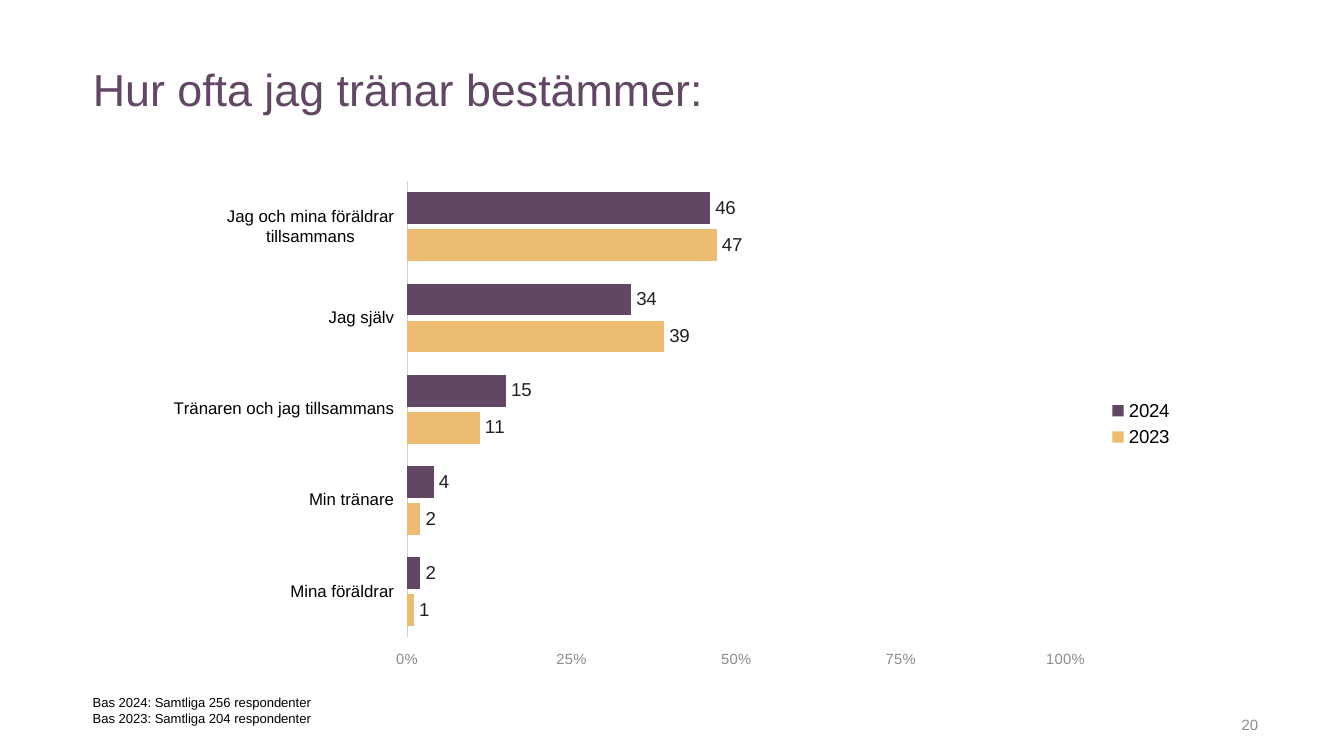
from lxml import etree
from pptx import Presentation
from pptx.chart.data import CategoryChartData
from pptx.dml.color import RGBColor
from pptx.enum.chart import XL_CHART_TYPE as ChartType
from pptx.enum.chart import XL_LABEL_POSITION as LabelPosition
from pptx.enum.chart import XL_LEGEND_POSITION as LegendPosition
from pptx.enum.chart import XL_TICK_LABEL_POSITION as TickLabels
from pptx.enum.chart import XL_TICK_MARK as TickMark
from pptx.enum.text import MSO_ANCHOR as Anchor
from pptx.enum.text import MSO_AUTO_SIZE as AutoSize
from pptx.enum.text import PP_ALIGN as Align
from pptx.oxml.ns import qn
from pptx.util import Inches, Pt

TITLE = "Hur ofta jag tränar bestämmer:"
CATEGORIES = [
    "Mina föräldrar",
    "Min tränare",
    "Tränaren och jag tillsammans",
    "Jag själv",
    "Jag och mina föräldrar tillsammans",
]
SERIES = [
    ("2023", [1, 2, 11, 39, 47], "gold"),
    ("2024", [2, 4, 15, 34, 46], "plum"),
]
BASES = ["Bas 2024: Samtliga 256 respondenter", "Bas 2023: Samtliga 204 respondenter"]
PAGE_NUMBER = "20"

FONT = "Arial"
COLORS = {
    "plum": "624764",
    "gold": "EBBC71",
    "black": "000000",
    "label": "212121",
    "gray": "8C8C8C",
    "line": "D1D1D1",
}
WIDTH = 10
HEIGHT = WIDTH * 9 / 16
MARGIN = 0.69
CHART_LEFT, CHART_TOP, CHART_WIDTH, CHART_HEIGHT = 1.14, 1.28, 7.69, 3.75
PLOT_AREA = {
    "x": 1.89 / CHART_WIDTH,
    "y": 0.07 / CHART_HEIGHT,
    "w": 4.9 / CHART_WIDTH,
    "h": 3.39 / CHART_HEIGHT,
}


def color(name):
    return RGBColor.from_string(COLORS[name])


def style(font, size, name):
    font.name = FONT
    font.size = Pt(size)
    font.color.rgb = color(name)


def place(shape, left, top, width, height):
    shape.left, shape.top = Inches(left), Inches(top)
    shape.width, shape.height = Inches(width), Inches(height)


def write(shape, lines, size, name, align=Align.LEFT, anchor=Anchor.TOP, inset=0):
    frame = shape.text_frame
    frame.word_wrap = True
    frame.auto_size = AutoSize.NONE
    frame.vertical_anchor = anchor
    frame.margin_left = frame.margin_right = Inches(inset)
    frame.margin_top = frame.margin_bottom = Inches(inset / 2)
    frame.text = "\n".join(lines)
    for paragraph in frame.paragraphs:
        paragraph.alignment = align
        style(paragraph.font, size, name)


def add_text(slide, box, *args, **options):
    shape = slide.shapes.add_textbox(*map(Inches, box))
    write(shape, *args, **options)


def fix_plot_area(chart):
    plot_area = chart.element.find(".//" + qn("c:plotArea"))
    layout = plot_area.find(qn("c:layout"))
    if layout is None:
        layout = etree.Element(qn("c:layout"))
        plot_area.insert(0, layout)
    manual = etree.SubElement(layout, qn("c:manualLayout"))
    settings = {"layoutTarget": "inner", "xMode": "edge", "yMode": "edge", **PLOT_AREA}
    for tag, value in settings.items():
        etree.SubElement(manual, qn("c:" + tag)).set("val", str(value))


def style_axis(axis, size, name):
    axis.major_tick_mark = axis.minor_tick_mark = TickMark.NONE
    axis.tick_label_position = TickLabels.LOW
    axis.has_major_gridlines = False
    style(axis.tick_labels.font, size, name)


def add_bar_chart(slide):
    data = CategoryChartData(number_format="0")
    data.categories = CATEGORIES
    for name, values, _ in SERIES:
        data.add_series(name, values)
    box = map(Inches, (CHART_LEFT, CHART_TOP, CHART_WIDTH, CHART_HEIGHT))
    chart = slide.shapes.add_chart(ChartType.BAR_CLUSTERED, *box, data).chart
    chart.has_title = False
    style(chart.font, 10, "label")
    fix_plot_area(chart)

    chart.has_legend = True
    chart.legend.position = LegendPosition.RIGHT
    chart.legend.include_in_layout = False
    style(chart.legend.font, 10, "black")

    categories, values = chart.category_axis, chart.value_axis
    style_axis(categories, 9, "black")
    categories.format.line.color.rgb = color("line")
    categories.format.line.width = Pt(0.75)
    style_axis(values, 7.9, "gray")
    values.format.line.fill.background()
    values.minimum_scale, values.maximum_scale, values.major_unit = 0, 100, 25
    values.tick_labels.number_format = "General\\%"
    values.tick_labels.number_format_is_linked = False

    plot = chart.plots[0]
    plot.gap_width, plot.overlap, plot.vary_by_categories = 70, -16, False
    for series, (_, _, fill) in zip(plot.series, SERIES):
        series.format.fill.solid()
        series.format.fill.fore_color.rgb = color(fill)
        labels = series.data_labels
        labels.show_value = True
        labels.position = LabelPosition.OUTSIDE_END
        labels.number_format = "0"
        labels.number_format_is_linked = False
        style(labels.font, 10, "label")


def main():
    presentation = Presentation()
    presentation.slide_width, presentation.slide_height = Inches(WIDTH), Inches(HEIGHT)
    slide = presentation.slides.add_slide(presentation.slide_layouts[5])

    title = slide.shapes.title
    place(title, MARGIN, 0.46, 8.58, 0.82)
    write(title, [TITLE], 24, "plum")
    add_bar_chart(slide)
    add_text(slide, (MARGIN, 5.17, 1.8, 0.31), BASES, 7, "black")
    add_text(slide, (7.21, 5.21, 2.25, 0.3), [PAGE_NUMBER], 8, "gray",
             align=Align.RIGHT, anchor=Anchor.BOTTOM, inset=0.1)
    presentation.save("out.pptx")


if __name__ == "__main__":
    main()
